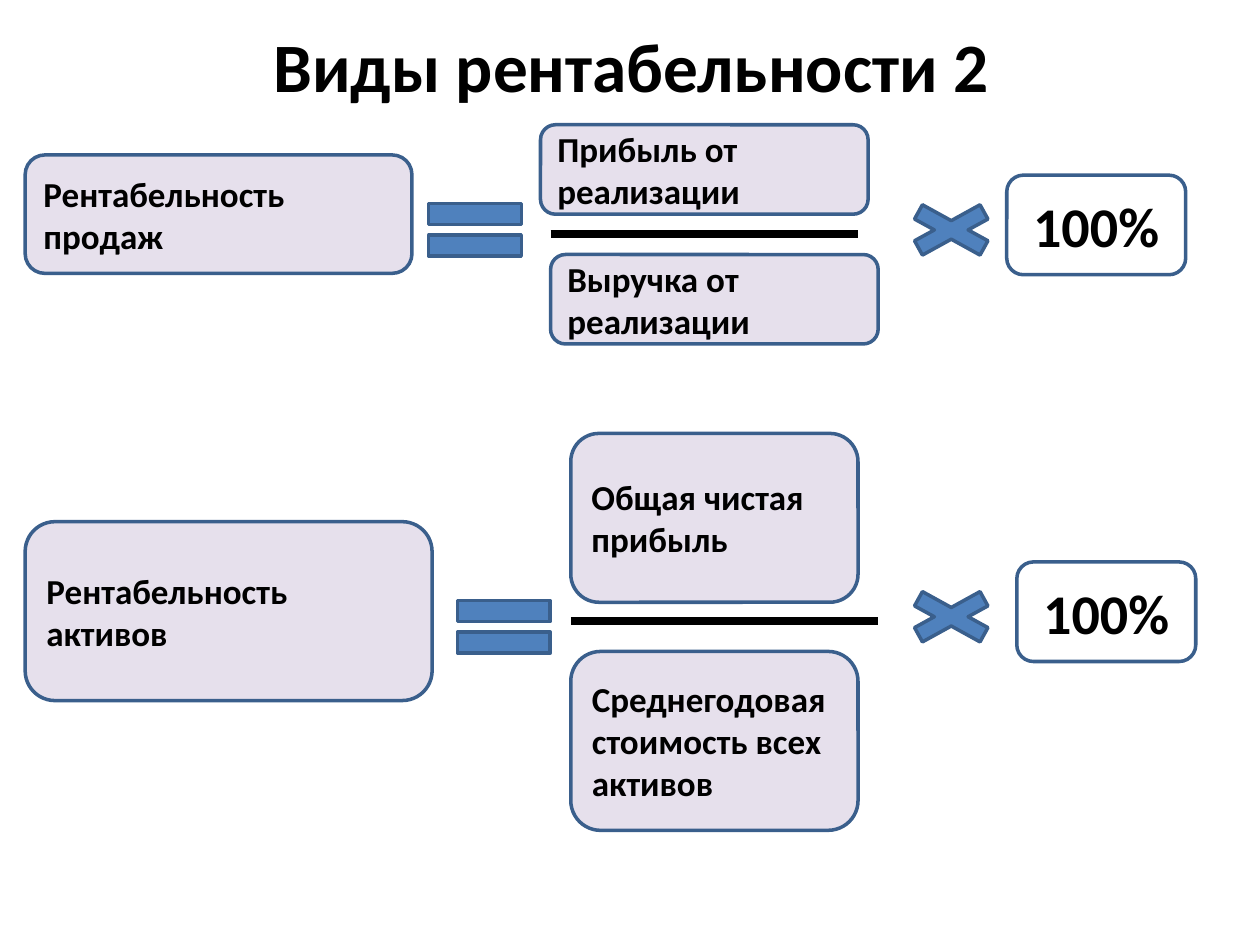
from dataclasses import dataclass

from lxml import etree
from pptx import Presentation
from pptx.dml.color import RGBColor
from pptx.enum import shapes, text
from pptx.oxml.ns import qn
from pptx.util import Inches, Pt


@dataclass(frozen=True)
class Theme:
    font: str = "Calibri"
    ink: RGBColor = RGBColor(0x00, 0x00, 0x00)
    panel: RGBColor = RGBColor(0xE6, 0xE0, 0xEC)
    accent: RGBColor = RGBColor(0x4F, 0x81, 0xBD)
    outline: RGBColor = RGBColor(0x3A, 0x5F, 0x8C)
    title_size: float = 39.6
    factor_size: float = 32
    body_size: float = 20
    outline_width: float = 2
    bar_width: float = 4.5


@dataclass(frozen=True)
class Box:
    left: float
    top: float
    width: float
    height: float

    def emu(self) -> tuple:
        return tuple(Inches(v) for v in (self.left, self.top, self.width, self.height))


@dataclass(frozen=True)
class Formula:
    """Result = numerator / denominator x 100%."""
    result: tuple[str, ...]
    result_box: Box
    equal_box: Box
    numerator: str
    numerator_box: Box
    denominator: str
    denominator_box: Box
    bar_left: float
    bar_top: float
    times_box: Box
    factor_box: Box


THEME = Theme()
BAR_LENGTH = 2.44
SHAPE = shapes.MSO_SHAPE

FORMULAS = (
    Formula(
        ("Рентабельность", "продаж"), Box(0.2, 1.23, 3.07, 0.94),
        Box(3.27, 1.47, 1, 0.71),
        "Прибыль от реализации", Box(4.29, 0.99, 2.6, 0.71),
        "Выручка от реализации", Box(4.37, 2.02, 2.6, 0.71),
        4.37, 1.86, Box(7.05, 1.55, 1, 0.55), Box(7.99, 1.39, 1.42, 0.79),
    ),
    Formula(
        ("Рентабельность", "активов"), Box(0.2, 4.14, 3.23, 1.42),
        Box(3.5, 4.62, 1, 0.71),
        "Общая чистая прибыль", Box(4.53, 3.44, 2.28, 1.34),
        "Среднегодовая стоимость всех активов", Box(4.53, 5.17, 2.28, 1.42),
        4.53, 4.93, Box(7.05, 4.62, 1, 0.55), Box(8.07, 4.46, 1.42, 0.79),
    ),
)


def write(sp, lines: tuple[str, ...], size: float, align) -> None:
    tf = sp.text_frame
    tf.word_wrap = True
    tf.vertical_anchor = text.MSO_ANCHOR.MIDDLE
    for i, line in enumerate(lines):
        p = tf.add_paragraph() if i else tf.paragraphs[0]
        p.text = line
        p.alignment = align
        p.font.name, p.font.size, p.font.bold = THEME.font, Pt(size), True
        p.font.color.rgb = THEME.ink


def add_outlined(slide, kind, box: Box, fill: RGBColor | None):
    sp = slide.shapes.add_shape(kind, *box.emu())
    sp.shadow.inherit = False
    if fill is None:
        sp.fill.background()
    else:
        sp.fill.solid()
        sp.fill.fore_color.rgb = fill
    sp.line.color.rgb = THEME.outline
    sp.line.width = Pt(THEME.outline_width)
    return sp


def add_term(slide, box: Box, *lines: str) -> None:
    sp = add_outlined(slide, SHAPE.ROUNDED_RECTANGLE, box, THEME.panel)
    write(sp, lines, THEME.body_size, text.PP_ALIGN.LEFT)


def add_bar(slide, left: float, top: float) -> None:
    bar = slide.shapes.add_connector(
        shapes.MSO_CONNECTOR.STRAIGHT, Inches(left), Inches(top),
        Inches(left + BAR_LENGTH), Inches(top))
    bar.line.color.rgb = THEME.ink
    bar.line.width = Pt(THEME.bar_width)
    etree.SubElement(bar._element.spPr, qn("a:effectLst"))


def add_formula(slide, f: Formula) -> None:
    add_term(slide, f.result_box, *f.result)
    add_outlined(slide, SHAPE.MATH_EQUAL, f.equal_box, THEME.accent)
    # Fraction
    add_term(slide, f.numerator_box, f.numerator)
    add_term(slide, f.denominator_box, f.denominator)
    add_bar(slide, f.bar_left, f.bar_top)
    # Multiplier
    add_outlined(slide, SHAPE.MATH_MULTIPLY, f.times_box, THEME.accent)
    factor = add_outlined(slide, SHAPE.ROUNDED_RECTANGLE, f.factor_box, None)
    write(factor, ("100%",), THEME.factor_size, text.PP_ALIGN.CENTER)


def main() -> None:
    prs = Presentation()
    prs.slide_width, prs.slide_height = Inches(10), Inches(7.5)
    slide = prs.slides.add_slide(prs.slide_layouts[6])

    # Title
    title = slide.shapes.add_textbox(*Box(0.51, 0.21, 9, 0.61).emu())
    write(title, ("Виды рентабельности 2",), THEME.title_size, text.PP_ALIGN.CENTER)

    # Formulas
    for formula in FORMULAS:
        add_formula(slide, formula)

    prs.save("out.pptx")


if __name__ == "__main__":
    main()
